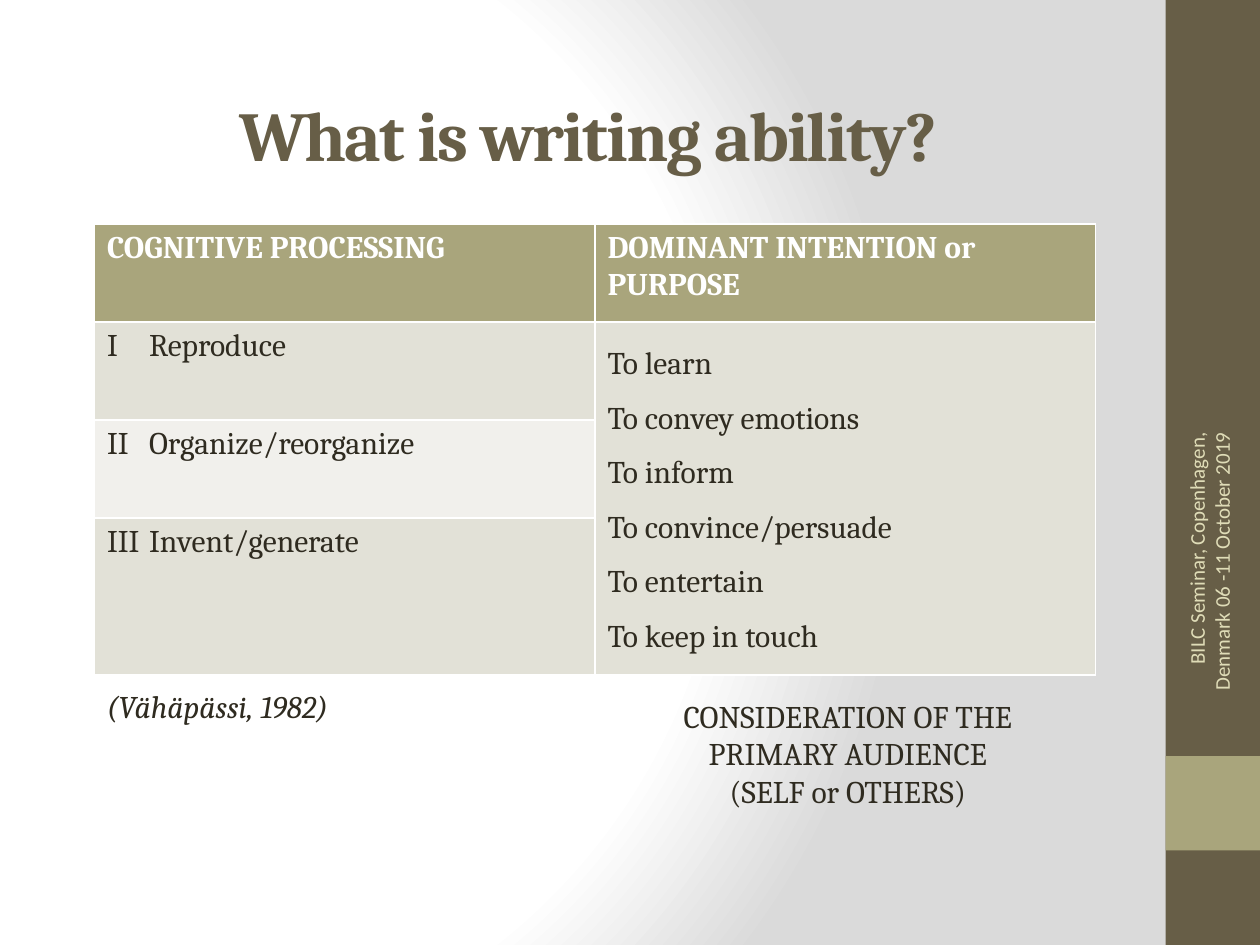
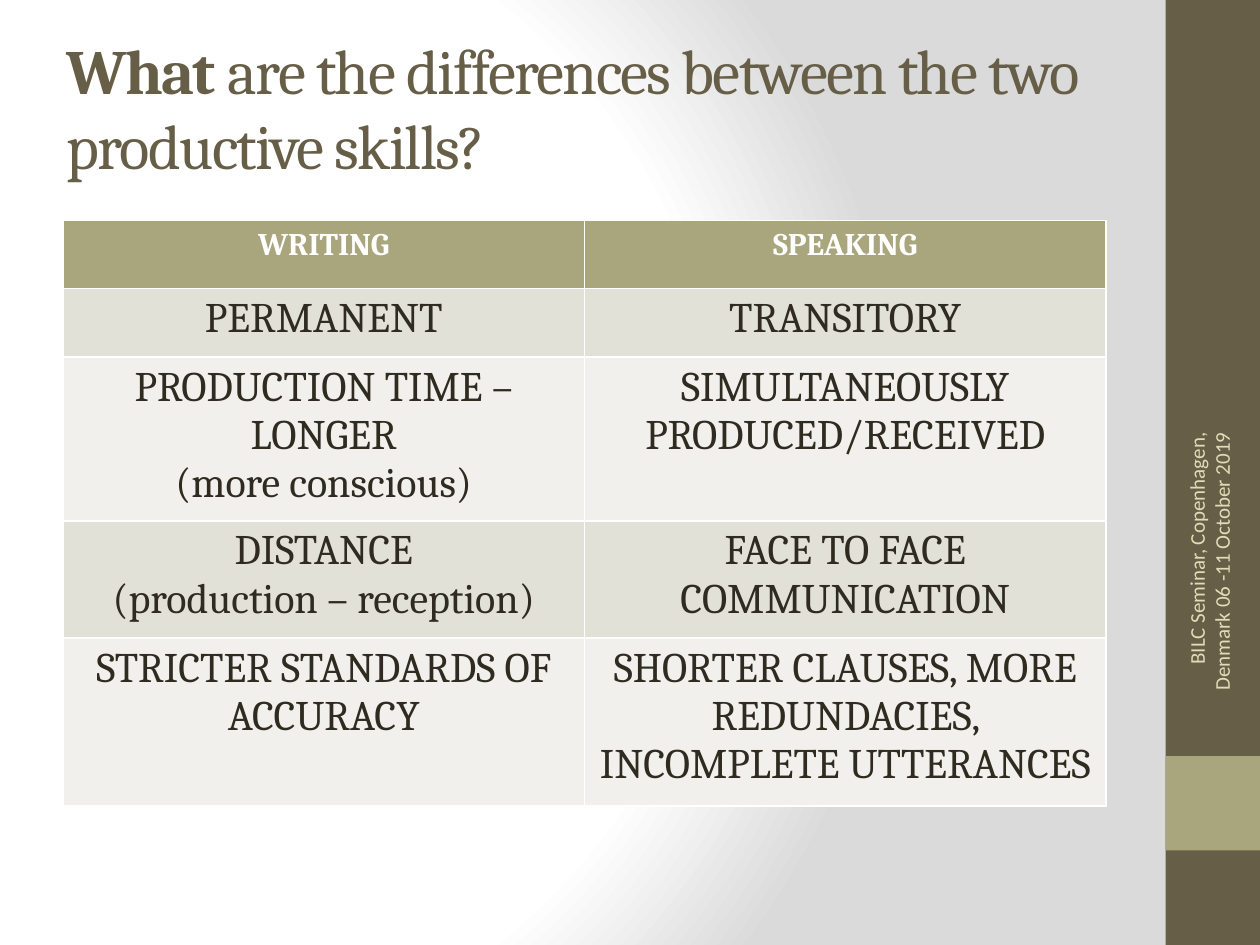
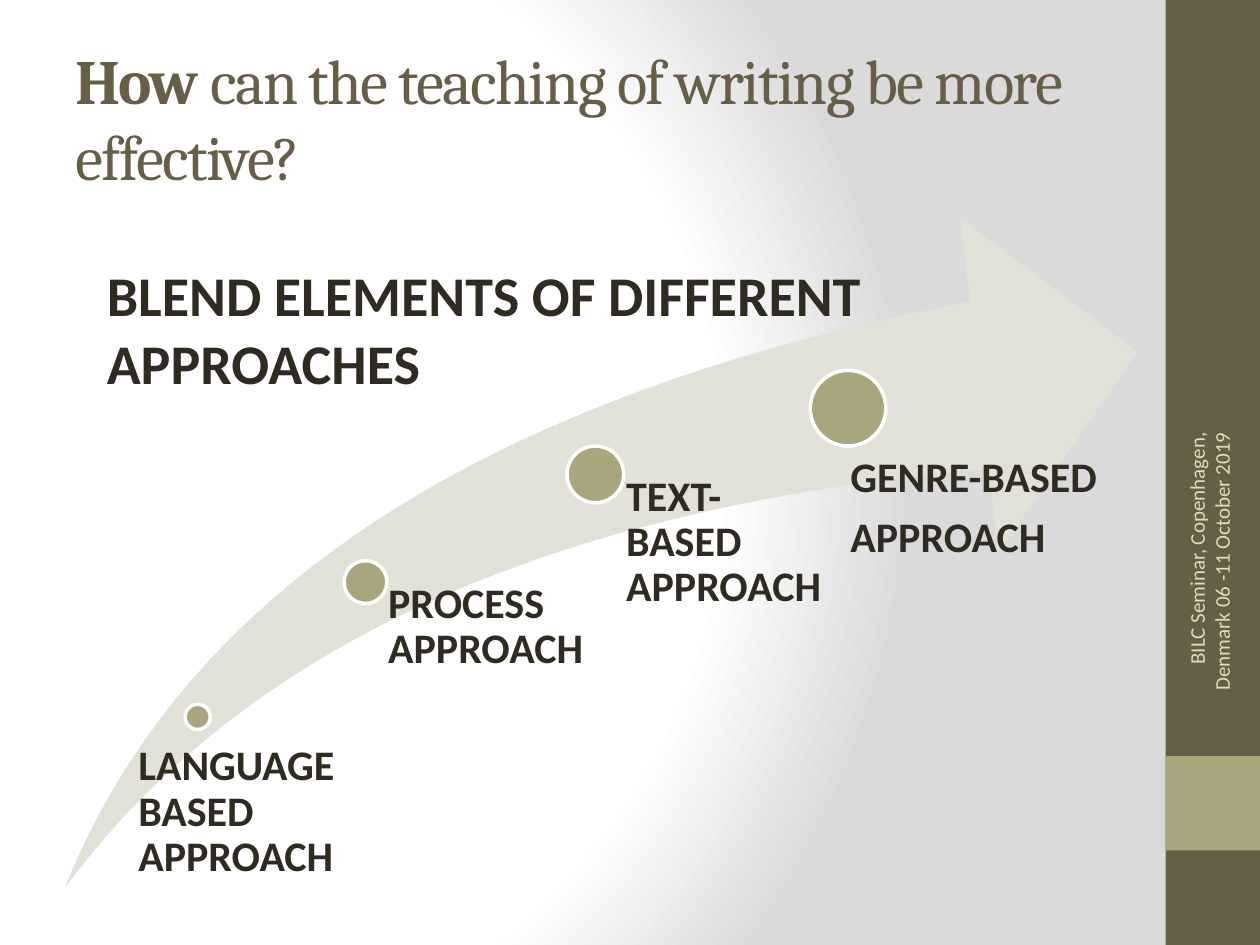
"""Build three seminar slides on the nature and the teaching of writing."""
from dataclasses import dataclass

from pptx import Presentation
from pptx.dml.color import RGBColor
from pptx.enum.shapes import MSO_SHAPE
from pptx.enum.text import MSO_ANCHOR, PP_ALIGN
from pptx.oxml import parse_xml
from pptx.oxml.ns import nsdecls, qn
from pptx.util import Pt


@dataclass(frozen=True)
class Theme:
    dark: str = "675E47"
    accent: str = "A9A57C"
    pale: str = "E2E1D7"
    paler: str = "F1F0EC"
    ink: str = "2F2B20"
    cream: str = "DFDCB7"
    white: str = "FFFFFF"
    shade: str = "DADADA"
    serif: str = "Cambria"
    sans: str = "Calibri"
    opening: int = 40
    title: int = 36
    callout: int = 32
    large: int = 24
    body: int = 18
    footer: int = 12


THEME = Theme()
FOOTER = "BILC Seminar, Copenhagen, Denmark 06 -11 October 2019"
INTENTIONS = ["To learn", "To convey emotions", "To inform",
              "To convince/persuade", "To entertain", "To keep in touch"]
PROCESSING = [
    ["COGNITIVE PROCESSING", "DOMINANT INTENTION or PURPOSE"],
    ["I\tReproduce", "\n".join(INTENTIONS)],
    ["II\tOrganize/reorganize", ""],
    ["III\tInvent/generate", ""],
]
SKILLS = [
    ["WRITING", "SPEAKING"],
    ["PERMANENT", "TRANSITORY"],
    ["PRODUCTION TIME – LONGER\n(more conscious)",
     "SIMULTANEOUSLY\nPRODUCED/RECEIVED"],
    ["DISTANCE\n(production – reception)", "FACE TO FACE COMMUNICATION"],
    ["STRICTER STANDARDS OF ACCURACY",
     "SHORTER CLAUSES, MORE REDUNDACIES, INCOMPLETE UTTERANCES"],
]
APPROACHES = [
    ("LANGUAGE BASED APPROACH", (105.8, 402.5, 14.4), (72, 425.5, 180, 48), 7.2),
    ("PROCESS APPROACH", (196.6, 320.4, 24.5), (208.8, 332.6, 129, 175), 13),
    ("TEXT-BASED APPROACH", (324, 254.9, 32.4), (340.6, 271.4, 129, 237), 17.2),
    ("GENRE-BASED\nAPPROACH", (463, 211.7, 43.2), (463, 260.6, 168.5, 109), 23),
]


def set_background(master):
    """Give every slide the round shading from white to grey."""
    master.background.fill.solid()
    properties = master.element.find(".//" + qn("p:bgPr"))
    stops = "".join(
        f'<a:gs pos="{place}000"><a:srgbClr val="{color}"/></a:gs>'
        for place, color in ((0, THEME.white), (75, THEME.white), (100, THEME.shade)))
    shading = parse_xml(
        f'<a:gradFill {nsdecls("a")} rotWithShape="1"><a:gsLst>{stops}</a:gsLst>'
        '<a:path path="circle"><a:fillToRect l="20000" t="50000" r="100000" b="50000"/>'
        '</a:path></a:gradFill>')
    properties.replace(properties[0], shading)


def style(paragraph, size, color, face=THEME.serif, bold=False, italic=False,
          align=PP_ALIGN.LEFT):
    """Set the font and alignment of a whole paragraph."""
    paragraph.alignment = align
    font = paragraph.font
    font.name, font.size, font.bold, font.italic = face, Pt(size), bold, italic
    font.color.rgb = RGBColor.from_string(color)


def add_text(slide, box, text, size, color=THEME.ink, anchor=MSO_ANCHOR.TOP,
             insets=(7.2, 3.6, 7.2, 3.6), **look):
    """Add a wrapped text box and return it."""
    holder = slide.shapes.add_textbox(*map(Pt, box))
    frame = holder.text_frame
    frame.word_wrap = True
    frame.vertical_anchor = anchor
    (frame.margin_left, frame.margin_top,
     frame.margin_right, frame.margin_bottom) = map(Pt, insets)
    frame.text = text
    for paragraph in frame.paragraphs:
        style(paragraph, size, color, **look)
    return holder


def add_title(slide, box, lead, rest="", size=THEME.title, **look):
    """Add a tightly set title whose lead is bold."""
    title = add_text(slide, box, lead, size, THEME.dark, **look)
    heading = title.text_frame.paragraphs[0]
    heading.runs[0].font.bold = True
    if rest:
        heading.add_run().text = rest
    for run in heading.runs:
        run._r.get_or_add_rPr().set("spc", "-100")


def add_figure(slide, kind, box, fill, outline=None):
    """Add a flat preset shape, with an outline if a colour is given."""
    figure = slide.shapes.add_shape(kind, *map(Pt, box))
    figure.shadow.inherit = False
    figure.fill.solid()
    figure.fill.fore_color.rgb = RGBColor.from_string(fill)
    if outline:
        figure.line.color.rgb = RGBColor.from_string(outline)
        figure.line.width = Pt(2)
    else:
        figure.line.fill.background()
    return figure


def add_grid(slide, corner, column_width, heights, rows, size, align=PP_ALIGN.LEFT):
    """Add a two-column table with a header row and banded rows."""
    width = column_width * len(rows[0])
    grid = slide.shapes.add_table(
        len(rows), len(rows[0]), *map(Pt, (*corner, width, sum(heights)))).table
    for index, (height, texts) in enumerate(zip(heights, rows)):
        grid.rows[index].height = Pt(height)
        header = index == 0
        band = THEME.accent if header else (THEME.paler, THEME.pale)[index % 2]
        for cell, text in zip(grid.rows[index].cells, texts):
            cell.fill.solid()
            cell.fill.fore_color.rgb = RGBColor.from_string(band)
            cell.text = text
            for paragraph in cell.text_frame.paragraphs:
                style(paragraph, THEME.body if header else size,
                      THEME.white if header else THEME.ink, bold=header, align=align)
    return grid


def add_slide(deck):
    """Add a slide with the side bands and the upright footer."""
    slide = deck.slides.add_slide(deck.slide_layouts[6])
    add_figure(slide, MSO_SHAPE.RECTANGLE, (666, 0, 54, 540), THEME.dark)
    add_figure(slide, MSO_SHAPE.RECTANGLE, (666, 432, 54, 54), THEME.accent)
    footer = add_text(slide, (597.6, 319, 186.5, 28.8), FOOTER, THEME.footer,
                      THEME.cream, MSO_ANCHOR.MIDDLE, face=THEME.sans,
                      align=PP_ALIGN.RIGHT)
    footer.rotation = 270
    return slide


def build_ability(deck):
    """Show cognitive processing beside the purposes of writing."""
    slide = add_slide(deck)
    add_title(slide, (36, 49, 600, 60), "What is writing ability?",
              size=THEME.opening, align=PP_ALIGN.CENTER)
    grid = add_grid(slide, (54, 128), 286, (56, 56, 56, 82), PROCESSING, THEME.body)
    for row in range(1, 4):
        level = grid.cell(row, 0).text_frame.paragraphs[0]._p.get_or_add_pPr()
        level.set("marL", str(Pt(24)))
        level.set("indent", str(-Pt(24)))
    purposes = grid.cell(1, 1)
    purposes.merge(grid.cell(3, 1))
    for purpose in purposes.text_frame.paragraphs:
        purpose.line_spacing = 1.5
    add_text(slide, (348.5, 394.5, 272, 73),
             "CONSIDERATION OF THE PRIMARY AUDIENCE\n(SELF or OTHERS)",
             THEME.body, align=PP_ALIGN.CENTER)
    add_text(slide, (54, 389, 249, 29), "(Vähäpässi, 1982)", THEME.body, italic=True)


def build_differences(deck):
    """Compare writing with speaking."""
    slide = add_slide(deck)
    add_title(slide, (31, 10, 605, 102), "What ",
              "are the differences between the two productive skills?",
              anchor=MSO_ANCHOR.MIDDLE)
    add_grid(slide, (36, 126), 298, (39, 39, 91, 67, 96), SKILLS, THEME.large,
             PP_ALIGN.CENTER)


def build_approaches(deck):
    """Place the teaching approaches along a rising arrow."""
    slide = add_slide(deck)
    add_title(slide, (36, 22, 600, 90), "How ",
              "can the teaching of writing be more effective?",
              anchor=MSO_ANCHOR.MIDDLE)
    rise = add_figure(slide, MSO_SHAPE.SWOOSH_ARROW, (37, 124.5, 613, 383), THEME.pale)
    rise.adjustments[0] = rise.adjustments[1] = 0.25
    for name, (left, top, diameter), box, inset in APPROACHES:
        add_figure(slide, MSO_SHAPE.OVAL, (left, top, diameter, diameter),
                   THEME.accent, THEME.white)
        label = add_text(slide, box, name, THEME.large, insets=(inset, 0, 0, 0),
                         face=THEME.sans, bold=True)
        for paragraph in label.text_frame.paragraphs:
            paragraph.line_spacing = 0.9
            paragraph.space_after = Pt(8.4)
    add_text(slide, (54, 145.5, 482, 85), "BLEND ELEMENTS OF DIFFERENT APPROACHES",
             THEME.callout, face=THEME.sans, bold=True)


def main():
    """Build and save the deck."""
    deck = Presentation()
    deck.slide_width, deck.slide_height = Pt(720), Pt(540)
    set_background(deck.slide_master)
    build_ability(deck)
    build_differences(deck)
    build_approaches(deck)
    deck.save("out.pptx")


if __name__ == "__main__":
    main()
